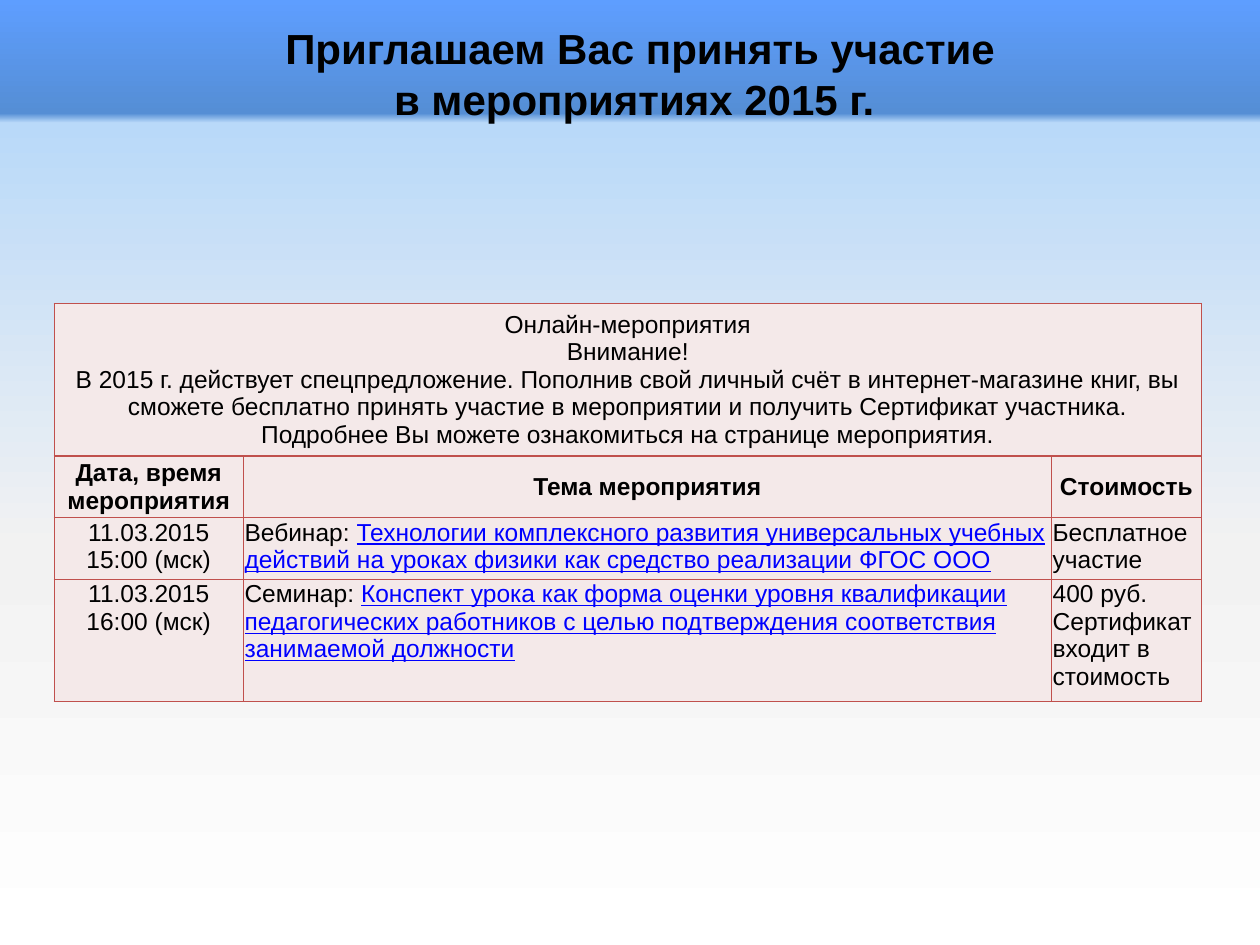
"""Build the slide that invites teachers to the events of 2015."""
from dataclasses import dataclass

from lxml.etree import SubElement
from pptx import Presentation
from pptx.dml.color import RGBColor
from pptx.enum.text import MSO_ANCHOR, MSO_AUTO_SIZE, PP_ALIGN
from pptx.oxml.ns import qn
from pptx.slide import Slide
from pptx.table import Table, _Cell
from pptx.util import Pt

BLACK = RGBColor(0x00, 0x00, 0x00)
LINK_BLUE = RGBColor(0x00, 0x00, 0xFF)
CELL_PINK = RGBColor(0xF4, 0xE9, 0xE9)
BORDER_RED = RGBColor(0xC0, 0x50, 0x4D)
BACKGROUND_STOPS = (
    (0, RGBColor(0x5E, 0x9E, 0xFF)),
    (12, RGBColor(0x55, 0x8E, 0xD5)),
    (13, RGBColor(0xB9, 0xD9, 0xF9)),
    (58, RGBColor(0xF2, 0xF2, 0xF2)),
    (100, RGBColor(0xFF, 0xFF, 0xFF)),
)

FONT = "Arial"
COLUMN_WIDTHS = (108, 461.8, 85.7)
ROW_HEIGHTS = (87, 35.3, 35.3, 69.8)
INSET = Pt(0.72)

TITLE = "Приглашаем Вас принять участие\nв мероприятиях 2015 г.\u00a0"
INTRO = (
    "Онлайн-мероприятия\vВнимание!\v"
    "В\u00a02015 г.\u00a0действует\u00a0спецпредложение. Пополнив свой личный счёт "
    "в интернет-магазине книг, вы сможете бесплатно принять участие в мероприятии "
    "и получить Сертификат участника.\v"
    "Подробнее Вы можете ознакомиться на странице мероприятия."
)
HEADINGS = ("Дата, время мероприятия", "Тема мероприятия", "Стоимость")


@dataclass(frozen=True)
class Event:
    when: str
    kind: str
    topic: str
    price: str


EVENTS = (
    Event(
        "11.03.2015\v15:00 (мск)",
        "Вебинар:\u00a0",
        "Технологии комплексного развития универсальных учебных действий "
        "на уроках физики как средство реализации ФГОС ООО",
        "Бесплатное участие",
    ),
    Event(
        "11.03.2015\v16:00 (мск)",
        "Семинар:\u00a0",
        "Конспект урока как форма оценки уровня квалификации педагогических "
        "работников с целью подтверждения соответствия занимаемой должности",
        "400 руб.\vСертификат входит в стоимость",
    ),
)


def format_paragraph(p, size: float, bold: bool, align: PP_ALIGN) -> None:
    p.alignment = align
    p.font.name = FONT
    p.font.size = Pt(size)
    p.font.bold = bold
    p.font.color.rgb = BLACK


def paint_background(slide: Slide) -> None:
    fill = slide.background.fill
    fill.gradient()
    fill.gradient_angle = 270
    stops = next(slide.element.iter(qn("a:gsLst")))
    stops.clear()
    for percent, color in BACKGROUND_STOPS:
        stop = SubElement(stops, qn("a:gs"), pos=str(percent * 1000))
        SubElement(stop, qn("a:srgbClr"), val=str(color))


def write_title(slide: Slide) -> None:
    sp = slide.shapes.title
    sp.left, sp.top, sp.width, sp.height = Pt(99.4), Pt(9.4), Pt(532.8), Pt(65.5)
    tf = sp.text_frame
    tf.text = TITLE
    tf.word_wrap = True
    tf.auto_size = MSO_AUTO_SIZE.NONE
    tf.vertical_anchor = MSO_ANCHOR.TOP
    for p in tf.paragraphs:
        format_paragraph(p, 24, True, PP_ALIGN.CENTER)


def style_cell(cell: _Cell) -> None:
    cell.margin_left = cell.margin_right = INSET
    cell.margin_top = cell.margin_bottom = INSET
    props = cell._tc.get_or_add_tcPr()
    for side in ("a:lnL", "a:lnR", "a:lnT", "a:lnB"):
        line = SubElement(props, qn(side), w=str(Pt(1)))
        SubElement(SubElement(line, qn("a:solidFill")), qn("a:srgbClr"), val=str(BORDER_RED))
    cell.fill.solid()
    cell.fill.fore_color.rgb = CELL_PINK


def write_cell(
    cell: _Cell,
    text: str,
    align: PP_ALIGN = PP_ALIGN.CENTER,
    anchor: MSO_ANCHOR = MSO_ANCHOR.TOP,
    bold: bool = False,
    link: str = "",
) -> None:
    cell.vertical_anchor = anchor
    p = cell.text_frame.paragraphs[0]
    p.text = text
    format_paragraph(p, 14, bold, align)
    if link:
        r = p.add_run()
        r.text = link
        r.font.underline = True
        r.font.color.rgb = LINK_BLUE


def fill_table(table: Table) -> None:
    for cell in table.iter_cells():
        style_cell(cell)
    table.cell(0, 0).merge(table.cell(0, len(COLUMN_WIDTHS) - 1))
    write_cell(table.cell(0, 0), INTRO, anchor=MSO_ANCHOR.MIDDLE)
    for col, heading in enumerate(HEADINGS):
        write_cell(table.cell(1, col), heading, anchor=MSO_ANCHOR.MIDDLE, bold=True)
    for row, event in enumerate(EVENTS, start=2):
        write_cell(table.cell(row, 0), event.when)
        write_cell(table.cell(row, 1), event.kind, PP_ALIGN.LEFT, link=event.topic)
        write_cell(table.cell(row, 2), event.price, PP_ALIGN.LEFT)


def add_schedule(slide: Slide) -> None:
    table = slide.shapes.add_table(
        len(ROW_HEIGHTS), len(COLUMN_WIDTHS), Pt(31), Pt(173.5),
        Pt(sum(COLUMN_WIDTHS)), Pt(sum(ROW_HEIGHTS)),
    ).table
    table.first_row = table.horz_banding = False
    for column, width in zip(table.columns, COLUMN_WIDTHS):
        column.width = Pt(width)
    for row, height in zip(table.rows, ROW_HEIGHTS):
        row.height = Pt(height)
    fill_table(table)


def main() -> None:
    prs = Presentation()
    prs.slide_width, prs.slide_height = Pt(720), Pt(540)
    slide = prs.slides.add_slide(prs.slide_layouts[5])
    paint_background(slide)
    write_title(slide)
    add_schedule(slide)
    prs.save("out.pptx")


if __name__ == "__main__":
    main()
